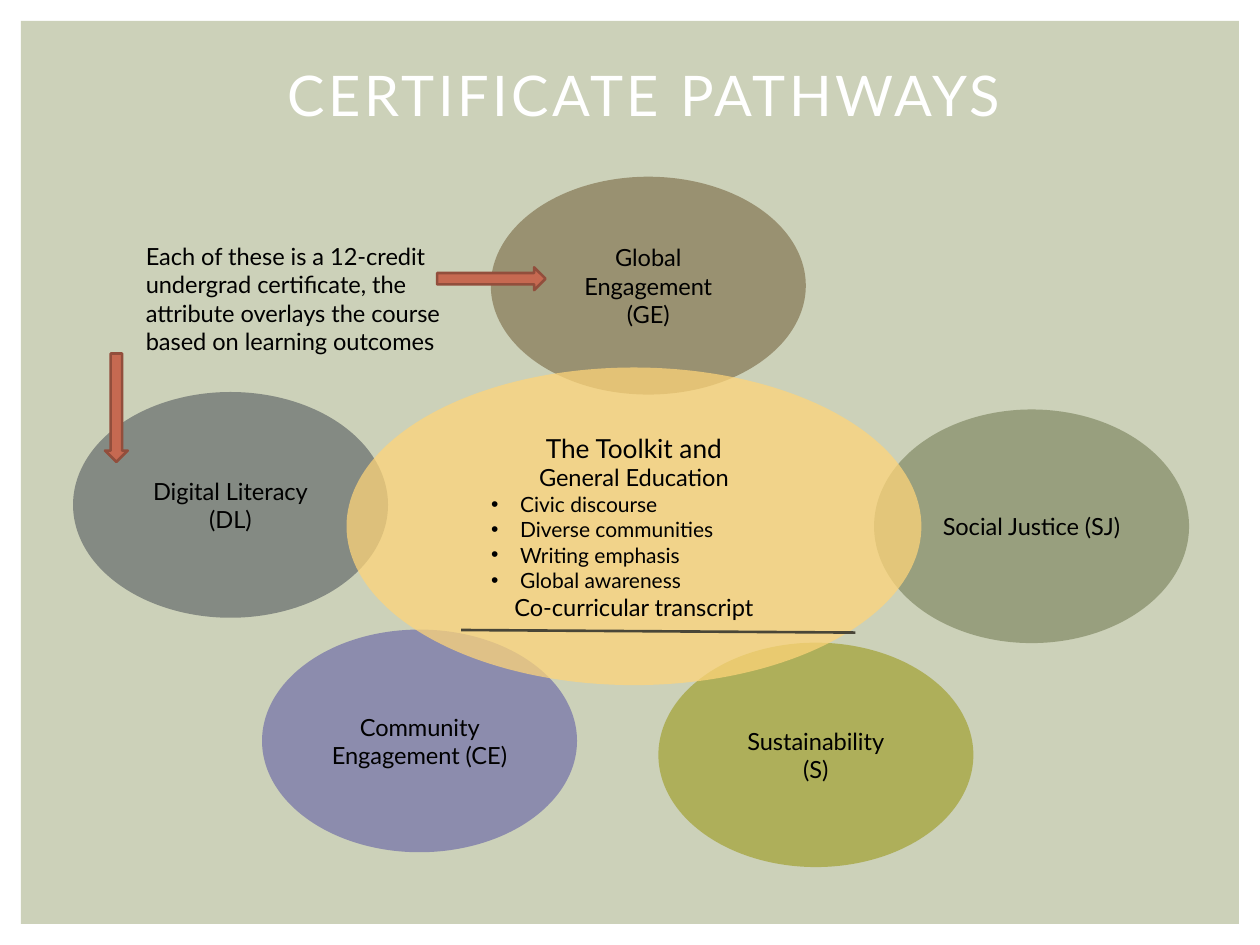
import pptx
import pptx.dml.color
import pptx.enum.shapes
import pptx.enum.text
import pptx.oxml.ns
import pptx.util
from lxml import etree

Pt = pptx.util.Pt
RGBColor = pptx.dml.color.RGBColor
SHAPE = pptx.enum.shapes.MSO_SHAPE
ALIGN = pptx.enum.text.PP_ALIGN
ANCHOR = pptx.enum.text.MSO_ANCHOR
qn = pptx.oxml.ns.qn

FONT = "Lato"
BLACK = RGBColor(0x00, 0x00, 0x00)
WHITE = RGBColor(0xFF, 0xFF, 0xFF)
SAGE = RGBColor(0xCC, 0xD1, 0xB9)
OLIVE = RGBColor(0x6E, 0x77, 0x4E)
BROWN = RGBColor(0x63, 0x4C, 0x23)
SLATE = RGBColor(0x53, 0x59, 0x5E)
LIME = RGBColor(0x92, 0x90, 0x00)
VIOLET = RGBColor(0x60, 0x5D, 0xA5)
GOLD = RGBColor(0xFF, 0xD5, 0x79)
RUST = RGBColor(0xC6, 0x69, 0x51)
DARK_RUST = RGBColor(0x92, 0x4E, 0x3C)
CHARCOAL = RGBColor(0x49, 0x46, 0x38)


def add_filled(kind, box, color, opacity=100):
    """Add a shape without outline or shadow; box is left, top, width, height in points."""
    shape = slide.shapes.add_shape(kind, *map(Pt, box))
    shape.shadow.inherit = False
    shape.line.fill.background()
    shape.fill.solid()
    shape.fill.fore_color.rgb = color
    if opacity < 100:
        tint = shape.fill._xPr.find(qn("a:solidFill"))[0]
        etree.SubElement(tint, qn("a:alpha"), val=str(opacity * 1000))
    return shape


def write_lines(frame, lines, align=ALIGN.CENTER, anchor=ANCHOR.MIDDLE, color=BLACK):
    """Write one paragraph per (text, size) pair."""
    frame.word_wrap = True
    frame.vertical_anchor = anchor
    for number, (text, size) in enumerate(lines):
        paragraph = frame.add_paragraph() if number else frame.paragraphs[0]
        paragraph.alignment = align
        run = paragraph.add_run()
        run.text = text
        run.font.name = FONT
        run.font.size = Pt(size)
        run.font.color.rgb = color


deck = pptx.Presentation()
deck.slide_width, deck.slide_height = Pt(720), Pt(540)
slide = deck.slides.add_slide(deck.slide_layouts[6])

add_filled(SHAPE.RECTANGLE, (12, 12, 696, 528 - 12), SAGE)

# Certificates around the centre: left, top, height, colour, opacity, lines
certificates = [
    (499.5, 234, 133.5, OLIVE, 55, ["Social Justice (SJ)"]),
    (280.5, 101, 124.5, BROWN, 48, ["Global Engagement", "(GE)"]),
    (41.75, 224, 129, SLATE, 59, ["Digital Literacy", "(DL)"]),
    (376.25, 367.25, 128.25, LIME, 51, ["Sustainability", "(S)"]),
    (149.75, 359.75, 127.25, VIOLET, 59, ["Community Engagement (CE)"]),
]
for left, top, height, color, opacity, lines in certificates:
    certificate = add_filled(SHAPE.OVAL, (left, top, 180, height), color, opacity)
    write_lines(certificate.text_frame, [(line, 13.5) for line in lines])

toolkit = add_filled(SHAPE.OVAL, (198, 210, 328.5, 181.5), GOLD, 73)
topics = ["Civic discourse", "Diverse communities", "Writing emphasis", "Global awareness"]
write_lines(
    toolkit.text_frame,
    [("The Toolkit and", 15), ("General Education", 13.5)]
    + [(topic, 12) for topic in topics]
    + [("Co-curricular transcript", 13.5)],
)
for paragraph in toolkit.text_frame.paragraphs[2:-1]:
    paragraph.alignment = ALIGN.LEFT
    paragraph.level = 1
    bullet_props = paragraph._p.get_or_add_pPr()
    bullet_props.set("marL", str(Pt(44)))
    bullet_props.set("indent", str(Pt(-16.5)))
    etree.SubElement(bullet_props, qn("a:buFont"), typeface="Arial")
    etree.SubElement(bullet_props, qn("a:buChar"), char="•")

title = slide.shapes.add_textbox(Pt(103), Pt(24.5), Pt(530), Pt(59))
write_lines(title.text_frame, [("CERTIFICATE PATHWAYS", 32)], color=WHITE)
title.text_frame.paragraphs[0].runs[0].font._element.set("spc", "200")

underline = slide.shapes.add_connector(
    pptx.enum.shapes.MSO_CONNECTOR.STRAIGHT, Pt(263.5), Pt(360), Pt(488.75), Pt(361.5)
)
underline.line.color.rgb = CHARCOAL
underline.line.width = Pt(1.5)
etree.SubElement(underline._element.spPr, qn("a:effectLst"))

explanation = slide.shapes.add_textbox(Pt(76.25), Pt(134.75), Pt(206.75), Pt(72.75))
write_lines(
    explanation.text_frame,
    [("Each of these is a 12-credit undergrad certificate, the attribute overlays "
      "the course based on learning outcomes", 13.5)],
    ALIGN.LEFT, ANCHOR.TOP,
)

for left, top, rotation in [(249.75, 152.75, 0), (35.5, 226.5, 90)]:
    arrow = add_filled(SHAPE.RIGHT_ARROW, (left, top, 62, 13), RUST)
    arrow.rotation = rotation
    arrow.line.color.rgb = DARK_RUST
    arrow.line.width = Pt(1.5)

deck.save("out.pptx")
